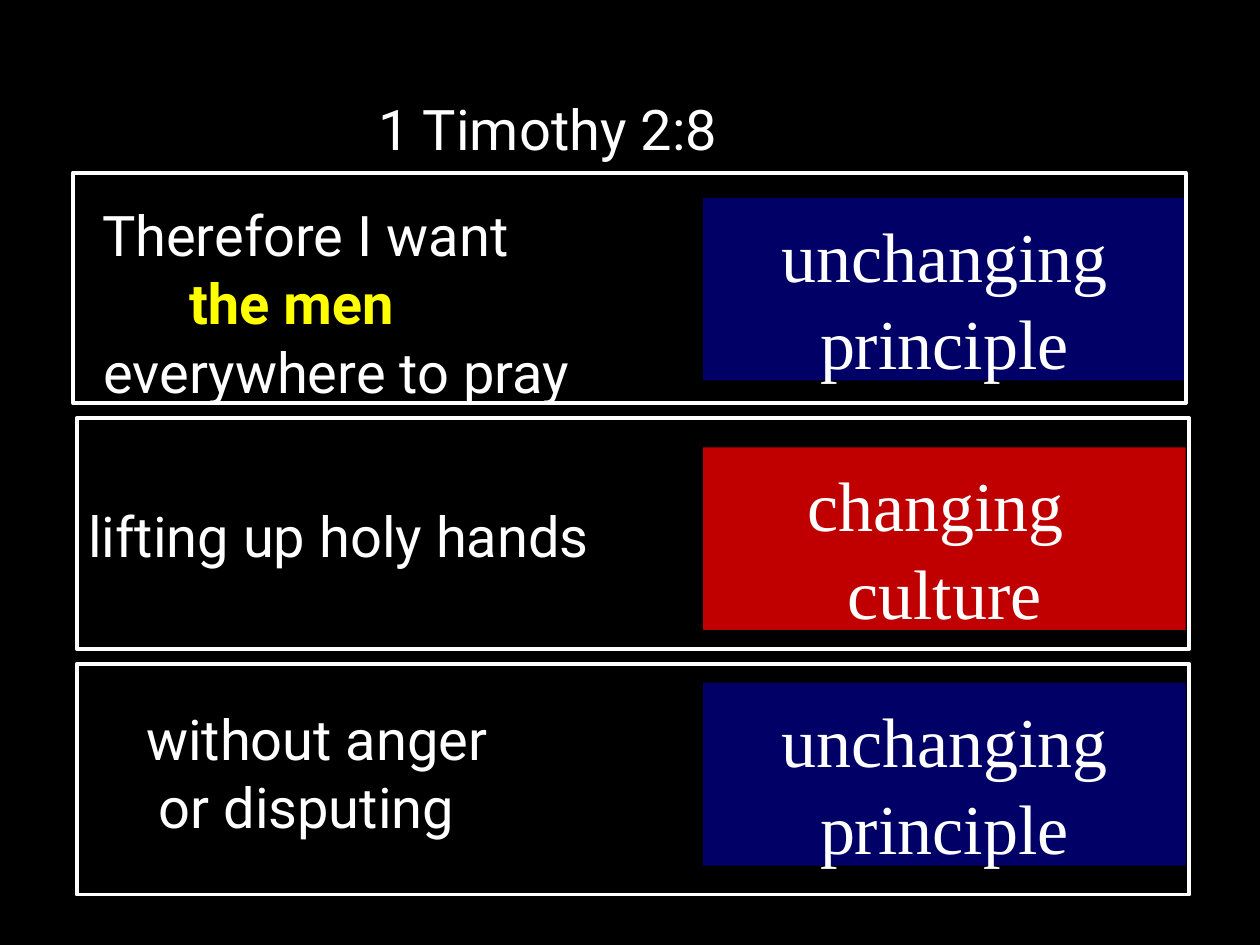
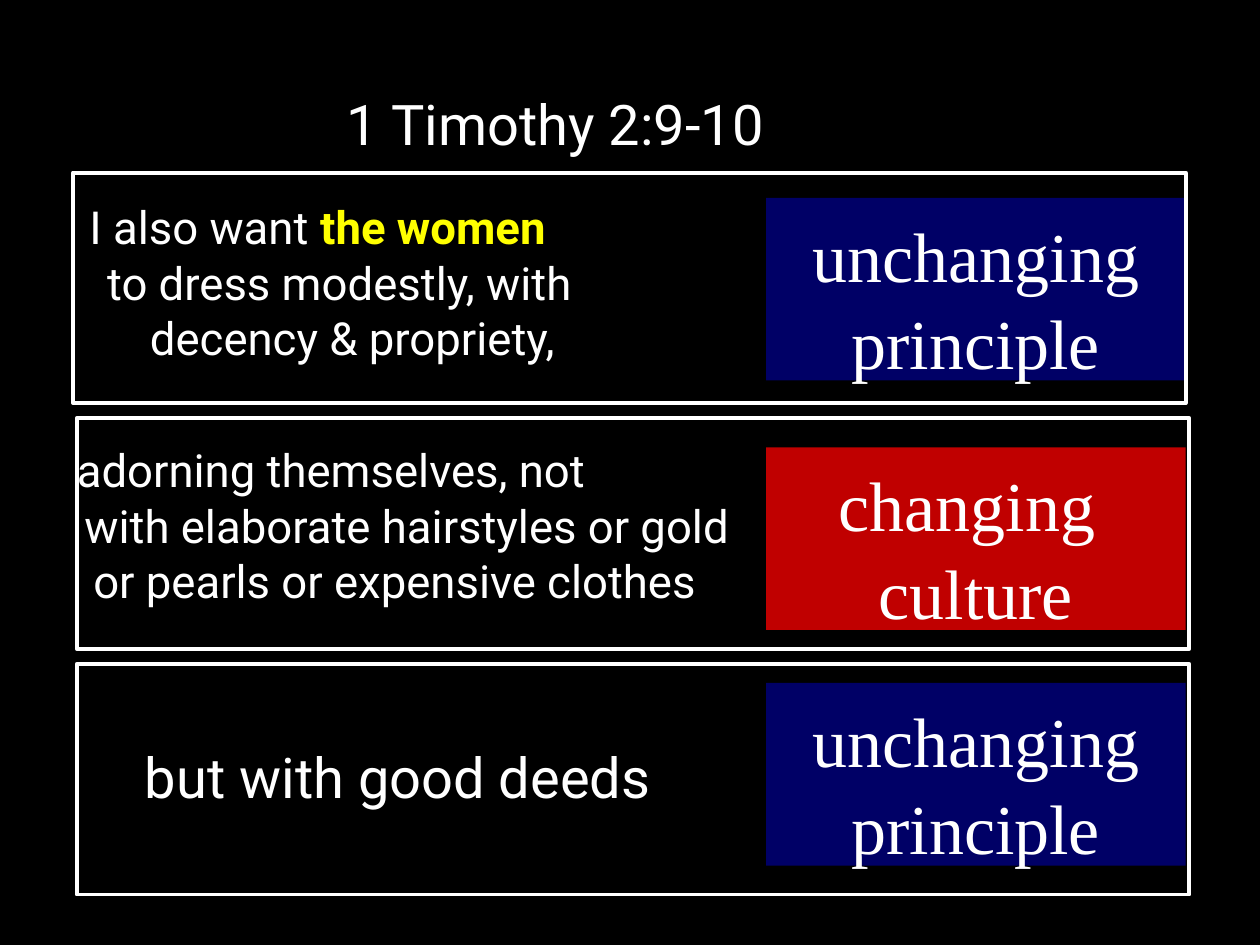
"""Build two slides that sort the lines of 1 Timothy 2:8-10 into principle and culture."""
from pptx import Presentation
from pptx.dml.color import RGBColor
from pptx.enum.shapes import MSO_SHAPE
from pptx.enum.text import MSO_ANCHOR, PP_ALIGN
from pptx.util import Inches, Pt

HUES = {"back": "000000", "text": "FFFFFF", "key": "FFFF00",
        "fixed": "000066", "shift": "C00000"}
BODY, SERIF = "Roboto", "Times New Roman"
EDGE = 0.5
FIXED = ("fixed", ["unchanging principle"])
SHIFT = ("shift", ["changing ", "culture"])

# Each band: frame left, frame top, badge top, badge
BANDS = [(0.58, 1.37, 1.57, FIXED),
         (0.61, 3.32, 3.55, SHIFT),
         (0.61, 5.27, 5.42, FIXED)]

# Each verse: top, size, lines of (left, plain words, key words)
SLIDES = [
    {"title": "1 Timothy 2:8", "mid": 4.35, "top": 0.74, "badge": 5.58,
     "verses": [
         (1.58, 32, [(0.81, "Therefore I want", ""),
                     (1.5, "", "the men"),
                     (0.82, "everywhere to pray", "")]),
         (3.97, 32, [(0.7, "lifting up holy hands", "")]),
         (5.58, 32, [(1.16, "without anger", ""),
                     (1.26, "or disputing", "")])]},
    {"title": "1 Timothy 2:9-10", "mid": 4.41, "top": 0.7, "badge": 6.08,
     "verses": [
         (1.57, 26, [(0.71, "I also want ", "the women"),
                     (0.85, "to dress modestly, with", ""),
                     (1.19, "decency & propriety,", "")]),
         (3.5, 26, [(0.61, "adorning themselves, not", ""),
                    (0.67, "with elaborate hairstyles or gold", ""),
                    (0.74, "or pearls or expensive clothes", "")]),
         (5.88, 32, [(1.15, "but with good deeds", "")])]},
]


def hue(name):
    return RGBColor.from_string(HUES[name])


def style(run, face, size, tint="text", bold=False):
    font = run.font
    font.name, font.size, font.bold = face, Pt(size), bold
    font.color.rgb = hue(tint)


def add_box(slide, left, top, wide, high):
    box = slide.shapes.add_textbox(*map(Inches, (left, top, wide, high)))
    frame = box.text_frame
    frame.word_wrap = True
    frame.margin_left = frame.margin_right = 0
    frame.margin_top = frame.margin_bottom = 0
    return frame


def add_rect(slide, left, top, wide, high):
    rect = slide.shapes.add_shape(
        MSO_SHAPE.RECTANGLE, *map(Inches, (left, top, wide, high)))
    rect.shadow.inherit = False
    return rect


def add_title(slide, words, mid, top):
    para = add_box(slide, mid - 3, top, 6, 0.55).paragraphs[0]
    para.text = words
    para.alignment = PP_ALIGN.CENTER
    para.line_spacing = 1.02
    style(para.runs[0], BODY, 32)


def add_verse(slide, top, size, lines, wide):
    frame = add_box(slide, EDGE, top, wide, len(lines) * size / 60)
    for i, (left, plain, key) in enumerate(lines):
        para = frame.add_paragraph() if i else frame.paragraphs[0]
        para.line_spacing = 1.02
        props = para._p.get_or_add_pPr()
        props.set("marL", str(Inches(left - EDGE)))
        props.set("indent", "0")
        for words, tint in ((plain, "text"), (key, "key")):
            if words:
                run = para.add_run()
                run.text = words
                style(run, BODY, size, tint, tint == "key")


def add_band(slide, band, left):
    edge, top, drop, (tint, lines) = band
    badge = add_rect(slide, left, drop, 9.41 - left, 1.45)
    badge.fill.solid()
    badge.fill.fore_color.rgb = hue(tint)
    badge.line.fill.background()
    frame = badge.text_frame
    frame.word_wrap = True
    frame.vertical_anchor = MSO_ANCHOR.TOP
    frame.margin_top, frame.margin_bottom = Inches(0.09), 0
    frame.text = "\n".join(lines)
    for para in frame.paragraphs:
        para.alignment = PP_ALIGN.CENTER
        para.line_spacing = 1.04
        style(para.runs[0], SERIF, 40)
    rim = add_rect(slide, edge, top, 8.83, 1.83)
    rim.fill.background()
    rim.line.color.rgb = hue("text")
    rim.line.width = Pt(2.25)


def main():
    deck = Presentation()
    deck.slide_width, deck.slide_height = Inches(10), Inches(7.5)
    for page in SLIDES:
        slide = deck.slides.add_slide(deck.slide_layouts[6])
        slide.background.fill.solid()
        slide.background.fill.fore_color.rgb = hue("back")
        add_title(slide, page["title"], page["mid"], page["top"])
        for band, verse in zip(BANDS, page["verses"]):
            add_verse(slide, *verse, page["badge"] - EDGE)
            add_band(slide, band, page["badge"])
    deck.save("out.pptx")


if __name__ == "__main__":
    main()
